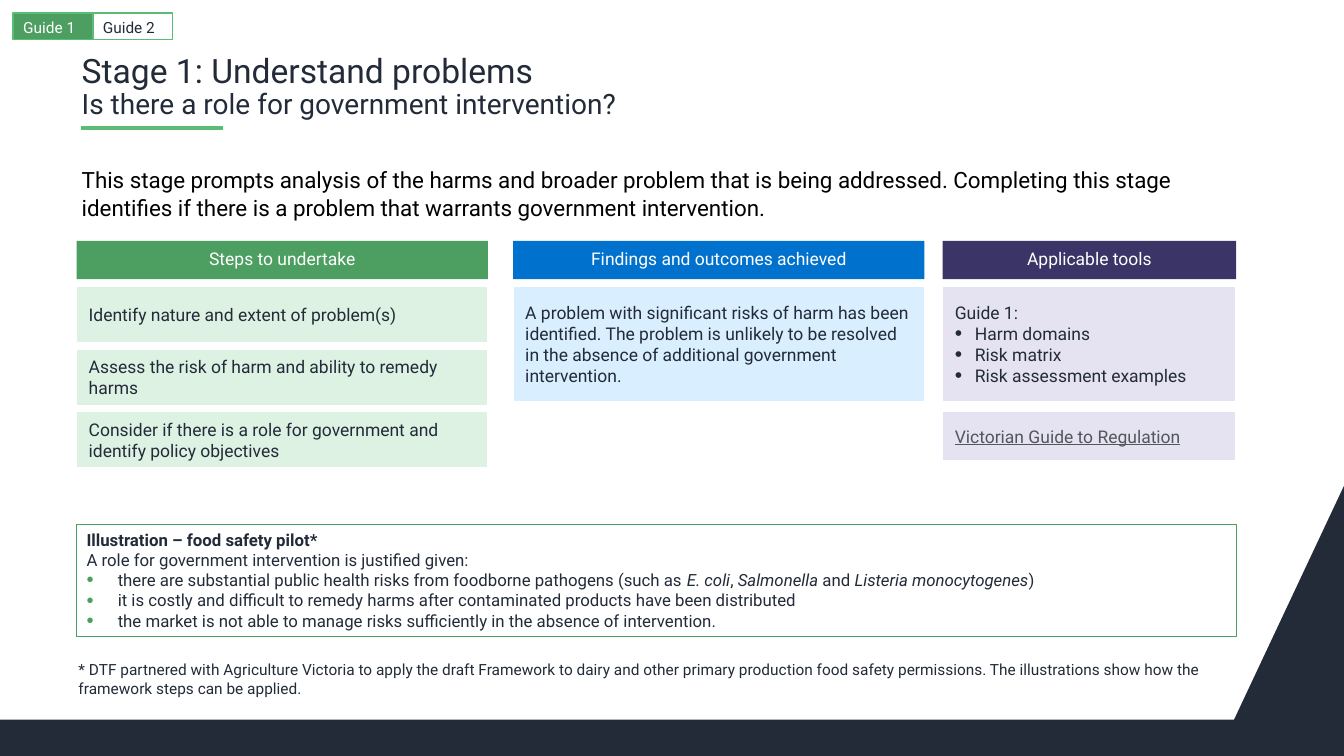
import pptx
import pptx.dml.color
import pptx.enum.shapes
import pptx.enum.text
import pptx.oxml
import pptx.oxml.ns
import pptx.util
from lxml import etree

COLOURS = {
    "ink": "232B39", "black": "000000", "white": "FFFFFF", "link": "53565A",
    "lime": "5BBD74", "green": "4C9E61", "pale green": "DEF2E3",
    "blue": "0072CE", "pale blue": "D9EEFF",
    "purple": "3A3467", "pale purple": "E5E3F1",
}
ALIGN = pptx.enum.text.PP_ALIGN
ANCHOR = pptx.enum.text.MSO_ANCHOR
RECTANGLE = pptx.enum.shapes.MSO_SHAPE.RECTANGLE
CARD_INSETS = (0.12, 0.08)
TITLE_INSETS = (0.04, 0.05)


class SlideBuilder:
    """Draws on one page; lengths are percentages of its width and height."""
    font = "Roboto"

    def __init__(self, deck):
        self.deck = deck
        self.page = deck.slides.add_slide(deck.slide_layouts[6])

    def x(self, share):
        return round(self.deck.slide_width * share / 100)

    def y(self, share):
        return round(self.deck.slide_height * share / 100)

    def place(self, left, top, width, height):
        return self.x(left), self.y(top), self.x(width), self.y(height)

    def colour(self, name):
        return pptx.dml.color.RGBColor.from_string(COLOURS[name])

    def paint(self, shape, fill=None, line=None, weight=1):
        shape.shadow.inherit = False
        if fill:
            shape.fill.solid()
            shape.fill.fore_color.rgb = self.colour(fill)
        else:
            shape.fill.background()
        if line:
            shape.line.color.rgb = self.colour(line)
            shape.line.width = pptx.util.Pt(weight)
        else:
            shape.line.fill.background()

    def frame(self, shape, insets=(0.1, 0.05), anchor=ANCHOR.TOP, grow=False):
        frame = shape.text_frame
        frame.word_wrap = True
        frame.vertical_anchor = anchor
        frame.margin_left = frame.margin_right = pptx.util.Inches(insets[0])
        frame.margin_top = frame.margin_bottom = pptx.util.Inches(insets[1])
        if grow:
            frame.auto_size = pptx.enum.text.MSO_AUTO_SIZE.SHAPE_TO_FIT_TEXT
        return frame

    def rectangle(self, area, fill=None, line=None, weight=1, **layout):
        box = self.page.shapes.add_shape(RECTANGLE, *self.place(*area))
        self.paint(box, fill, line, weight)
        return self.frame(box, **layout)

    def text_box(self, area, **layout):
        return self.frame(self.page.shapes.add_textbox(*self.place(*area)), **layout)

    def paragraph(self, frame, align=ALIGN.LEFT, spacing=None, before=0, after=0):
        para = frame.paragraphs[0]
        if para.runs:
            para = frame.add_paragraph()
        para.alignment = align
        para.space_before = pptx.util.Pt(before)
        para.space_after = pptx.util.Pt(after)
        if spacing:
            para.line_spacing = spacing
        return para

    def run(self, para, text, size, colour="ink", bold=False, italic=False, underline=False):
        span = para.add_run()
        span.text = text
        span.font.name = self.font
        span.font.size = pptx.util.Pt(size)
        span.font.color.rgb = self.colour(colour)
        span.font.bold, span.font.italic = bold, italic
        span.font.underline = underline

    def bullet(self, para, indent, colour):
        properties = para._p.get_or_add_pPr()
        step = pptx.util.Inches(indent)
        properties.set("marL", str(step))
        properties.set("indent", str(-step))
        qualified = pptx.oxml.ns.qn
        tint = etree.SubElement(properties, qualified("a:buClr"))
        etree.SubElement(tint, qualified("a:srgbClr"), val=COLOURS[colour])
        etree.SubElement(properties, qualified("a:buSzPct"), val="120000")
        etree.SubElement(properties, qualified("a:buFont"), typeface="Arial")
        etree.SubElement(properties, qualified("a:buChar"), char="•")

    def card(self, area, fill):
        return self.rectangle(area, fill, "white", insets=CARD_INSETS, anchor=ANCHOR.MIDDLE)

    def heading(self, area, text, fill):
        frame = self.rectangle(area, fill, insets=CARD_INSETS, anchor=ANCHOR.MIDDLE)
        self.run(self.paragraph(frame, ALIGN.CENTER, 0.9), text, 12.5, "white")

    def rule(self, left, right, top, colour, weight):
        line = self.page.shapes.add_connector(
            pptx.enum.shapes.MSO_CONNECTOR.STRAIGHT,
            self.x(left), self.y(top), self.x(right), self.y(top))
        line.line.color.rgb = self.colour(colour)
        line.line.width = pptx.util.Pt(weight)
        etree.SubElement(line._element.spPr, pptx.oxml.ns.qn("a:effectLst"))

    def polygon(self, points, fill):
        corners = [(self.x(across), self.y(down)) for across, down in points]
        builder = self.page.shapes.build_freeform(*corners[0])
        builder.add_line_segments(corners[1:], close=True)
        self.paint(builder.convert_to_shape(), fill)


def main():
    deck = pptx.Presentation()
    deck.slide_width = pptx.util.Inches(13.33)
    deck.slide_height = pptx.util.Inches(7.5)
    slide = SlideBuilder(deck)

    # Footer band and title rule
    slide.polygon([(91.82, 95.2), (0, 95.2), (0, 100), (100, 100), (100, 64.27)], "ink")
    slide.rule(6, 16.58, 16.93, "lime", 3)

    # Title and introduction
    title = slide.text_box((5.78, 6.53, 86.27, 6.8), insets=TITLE_INSETS)
    para = slide.paragraph(title, spacing=0.9)
    slide.run(para, "Stage 1: Understand problems", 24)
    para.add_line_break()
    slide.run(para, "Is there a role for government intervention?", 20)
    intro = slide.text_box((5.78, 21.07, 86.27, 9.5), insets=TITLE_INSETS)
    slide.run(slide.paragraph(intro, spacing=1.06, before=6, after=8),
              "This stage prompts analysis of the harms and broader problem that is being "
              "addressed. Completing this stage identifies if there is a problem that "
              "warrants government intervention.", 16, "black")

    # Guide tabs
    tab_width = 5.93
    for index, (text, fill, colour) in enumerate(
            [("Guide 2", None, "ink"), ("Guide 1", "green", "white")]):
        tab = slide.rectangle((0.98 + (1 - index) * tab_width, 1.73, tab_width, 3.47),
                              fill, "lime")
        slide.run(slide.paragraph(tab, before=2, after=2), text, 11, colour)

    # Column headings
    steps, findings, tools = (5.7, 30.6), (38.18, 30.6), (70.14, 21.83)
    for (left, width), text, fill in [
            (steps, "Steps to undertake", "green"),
            (findings, "Findings and outcomes achieved", "blue"),
            (tools, "Applicable tools", "purple")]:
        slide.heading((left, 31.87, width, 5.07), text, fill)

    # Steps
    first_row, row_pitch, tall = 37.87, 8.27, 15.33
    for index, text in enumerate([
            "Identify nature and extent of problem(s)",
            "Assess the risk of harm and ability to remedy harms",
            "Consider if there is a role for government and identify policy objectives"]):
        step = slide.card((steps[0], first_row + index * row_pitch, steps[1], 7.47),
                          "pale green")
        slide.run(slide.paragraph(step), text, 12.5)

    # Findings
    finding = slide.card((findings[0], first_row, findings[1], tall), "pale blue")
    slide.run(slide.paragraph(finding, before=6, after=6),
              "A problem with significant risks of harm has been identified. The problem is "
              "unlikely to be resolved in the absence of additional government intervention.",
              12.5)

    # Tools
    guide = slide.card((tools[0], first_row, tools[1], tall), "pale purple")
    slide.run(slide.paragraph(guide), "Guide 1:", 12.5)
    for text in ["Harm domains", "Risk matrix", "Risk assessment examples"]:
        para = slide.paragraph(guide)
        slide.bullet(para, 0.2, "ink")
        slide.run(para, text, 12.5)
    regulation = slide.card((tools[0], first_row + 2 * row_pitch, tools[1], 6.53),
                            "pale purple")
    slide.run(slide.paragraph(regulation), "Victorian Guide to Regulation", 12.5,
              "link", underline=True)

    # Illustration
    pilot = slide.rectangle((steps[0], 69.4, 86.27, 14.8), None, "green", 0.75, grow=True)
    slide.run(slide.paragraph(pilot), "Illustration – food safety pilot*", 12, bold=True)
    slide.run(slide.paragraph(pilot),
              "A role for government intervention is justified given:", 12)
    reasons = [
        ["there are substantial public health risks from foodborne pathogens (such as ",
         "E. coli", ", ", "Salmonella", " and ", "Listeria monocytogenes", ")"],
        ["it is costly and difficult to remedy harms after contaminated products have "
         "been distributed"],
        ["the market is not able to manage risks sufficiently in the absence of "
         "intervention."],
    ]
    for reason in reasons:
        para = slide.paragraph(pilot)
        slide.bullet(para, 0.31, "green")
        for index, text in enumerate(reason):
            slide.run(para, text, 12, italic=index % 2 == 1)

    # Footnote
    footnote = slide.text_box((5.1, 86.67, 86.87, 6.27), grow=True)
    slide.run(slide.paragraph(footnote),
              "* DTF partnered with Agriculture Victoria to apply the draft Framework to dairy "
              "and other primary production food safety permissions. The illustrations show "
              "how the framework steps can be applied.", 11)

    deck.save("out.pptx")


if __name__ == "__main__":
    main()
